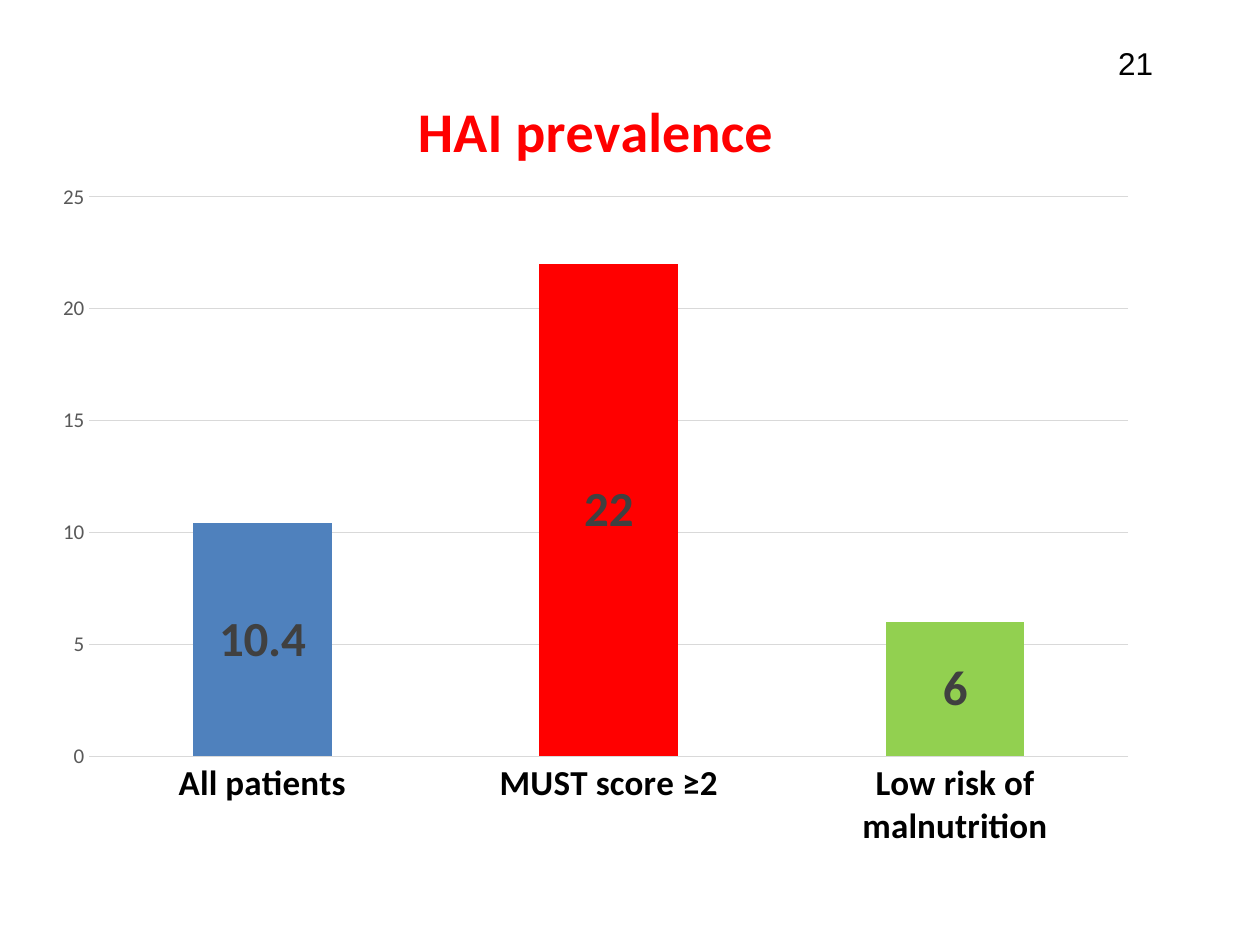
import pptx
import pptx.chart.data
import pptx.dml.color
import pptx.enum.chart
import pptx.enum.text
import pptx.oxml
import pptx.oxml.ns
import pptx.util

Inches = pptx.util.Inches
qn = pptx.oxml.ns.qn

TITLE = "HAI prevalence"
PAGE_NUMBER = "21"
PREVALENCE = [
    ("All patients", 10.4, "4F81BD"),
    ("MUST score ≥2", 22, "FF0000"),
    ("Low risk of malnutrition", 6, "92D050"),
]
THEME = {
    "chart": (10, "000000", False, "Calibri"),
    "title": (32, "FF0000", True, "Calibri"),
    "category": (20, "000000", True, "Calibri"),
    "scale": (12, "595959", False, "Calibri"),
    "label": (28, "404040", True, "Calibri"),
    "number": (18, "000000", False, "Arial"),
    "grid": "D9D9D9",
}
CHART_BOX = (0.33, 0.32, 8.81, 6.54)
PLOT_BOX = (0.71, 1.56, 8.25, 4.44)
TITLE_CORNER = (3.27, 0.65)
NUMBER_BOX = (8.77, 0.3, 0.48, 0.4)


def rgb(value):
    return pptx.dml.color.RGBColor.from_string(value)


def style_font(font, role):
    size, color, bold, name = THEME[role]
    font.size = pptx.util.Pt(size)
    font.bold = bold
    font.name = name
    font.color.rgb = rgb(color)


def place_in_chart(element, left, top, width=None, height=None):
    chart_left, chart_top, chart_width, chart_height = CHART_BOX
    values = {
        "x": (left - chart_left) / chart_width,
        "y": (top - chart_top) / chart_height,
    }
    settings = [("xMode", "edge"), ("yMode", "edge")]
    if width:
        settings.insert(0, ("layoutTarget", "inner"))
        values["w"] = width / chart_width
        values["h"] = height / chart_height
    settings += [(tag, f"{value:.2f}" if not width else f"{value:.3f}") for tag, value in values.items()]
    layout = element.find(qn("c:layout"))
    if layout is None:
        layout = pptx.oxml.parse_xml(f"<c:layout {pptx.oxml.ns.nsdecls('c')}/>")
        element.insert(0, layout)
    manual = layout.makeelement(qn("c:manualLayout"))
    layout.append(manual)
    for tag, value in settings:
        manual.append(manual.makeelement(qn(f"c:{tag}"), {"val": value}))


def add_prevalence_chart(page):
    data = pptx.chart.data.CategoryChartData()
    data.categories = [name for name, value, color in PREVALENCE]
    data.add_series("Series 1", [value for name, value, color in PREVALENCE])
    chart = page.shapes.add_chart(
        pptx.enum.chart.XL_CHART_TYPE.COLUMN_STACKED, *map(Inches, CHART_BOX), data
    ).chart
    style_font(chart.font, "chart")
    chart.has_legend = False

    chart.has_title = True
    span = chart.chart_title.text_frame.paragraphs[0].add_run()
    span.text = TITLE
    style_font(span.font, "title")
    place_in_chart(chart.chart_title._element, *TITLE_CORNER)

    plot = chart.plots[0]
    plot.gap_width = 150
    plot.overlap = 100
    plot.vary_by_categories = False
    place_in_chart(plot._element.getparent(), *PLOT_BOX)

    series = plot.series[0]
    series.format.fill.solid()
    series.format.fill.fore_color.rgb = rgb(PREVALENCE[0][2])
    for index, (name, value, color) in enumerate(PREVALENCE[1:], 1):
        fill = series.points[index].format.fill
        fill.solid()
        fill.fore_color.rgb = rgb(color)
    labels = series.data_labels
    labels.show_value = True
    labels.position = pptx.enum.chart.XL_LABEL_POSITION.CENTER
    style_font(labels.font, "label")

    for axis, role in ((chart.category_axis, "category"), (chart.value_axis, "scale")):
        axis.major_tick_mark = pptx.enum.chart.XL_TICK_MARK.NONE
        axis.minor_tick_mark = pptx.enum.chart.XL_TICK_MARK.NONE
        axis.format.line.fill.background()
        style_font(axis.tick_labels.font, role)
    scale = chart.value_axis
    scale.minimum_scale, scale.maximum_scale, scale.major_unit = 0, 25, 5
    scale.has_major_gridlines = True
    grid = scale.major_gridlines.format.line
    grid.width = pptx.util.Pt(0.75)
    grid.color.rgb = rgb(THEME["grid"])


def add_page_number(page):
    frame = page.shapes.add_textbox(*map(Inches, NUMBER_BOX)).text_frame
    frame.word_wrap = False
    frame.auto_size = pptx.enum.text.MSO_AUTO_SIZE.SHAPE_TO_FIT_TEXT
    para = frame.paragraphs[0]
    para.alignment = pptx.enum.text.PP_ALIGN.RIGHT
    span = para.add_run()
    span.text = PAGE_NUMBER
    style_font(span.font, "number")


def main():
    deck = pptx.Presentation()
    deck.slide_width, deck.slide_height = Inches(10), Inches(7.5)
    page = deck.slides.add_slide(deck.slide_layouts[6])
    add_prevalence_chart(page)
    add_page_number(page)
    deck.save("out.pptx")


if __name__ == "__main__":
    main()
